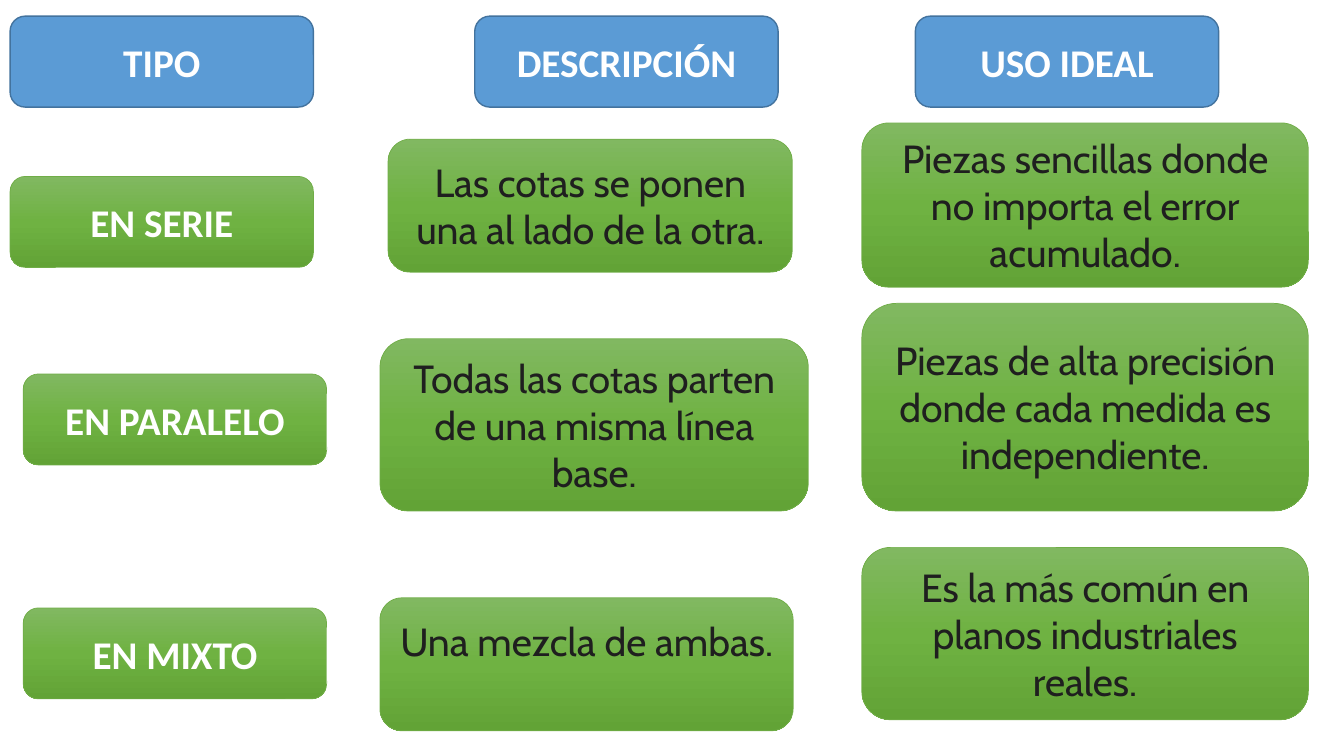
"""Build a slide comparing three ways of dimensioning a drawing."""
from copy import deepcopy

from pptx import Presentation
from pptx.dml.color import RGBColor
from pptx.enum import shapes, text
from pptx.util import Pt

GREENS = [(0, "81B861"), (0.5, "6FB242"), (1, "62A336")]
LABEL_W, LABEL_H = 216.7, 65
USE_LEFT, USE_W = 615.6, 319

HEADERS = [("TIPO", 7.2), ("DESCRIPCIÓN", 339.1), ("USO IDEAL", 653.8)]
TYPES = [("EN SERIE", 7.2, 126), ("EN PARALELO", 16.6, 267.1), ("EN MIXTO", 16.6, 434.2)]
DETAILS = [
    ("Las cotas se ponen una al lado de la otra.", 277.2, 99.4, 288.7, 95),
    ("Todas las cotas parten de una misma línea base.", 271.4, 241.9, 306, 123.1),
    ("Una mezcla de ambas.", 271.4, 427, 295.2, 95),
    ("Piezas sencillas donde no importa el error acumulado.", USE_LEFT, 87.8, USE_W, 117.4),
    ("Piezas de alta precisión donde cada medida es independiente.",
     USE_LEFT, 216.7, USE_W, 148.3),
    ("Es la más común en planos industriales reales.", USE_LEFT, 391, USE_W, 123.1),
]


def rgb(value):
    return RGBColor.from_string(value)


def add_box(s, words, left, top, width, height, header=False, label=True):
    sp = s.shapes.add_shape(shapes.MSO_SHAPE.ROUNDED_RECTANGLE,
                            Pt(left), Pt(top), Pt(width), Pt(height))
    sp.shadow.inherit = False
    if header:
        sp.fill.solid()
        sp.fill.fore_color.rgb = rgb("5B9BD5")
    else:
        sp.fill.gradient()
        sp.fill.gradient_angle = 270
        stops = sp._element.xpath(".//a:gsLst")[0]
        stops.append(deepcopy(stops[0]))
        for stop, (position, color) in zip(sp.fill.gradient_stops, GREENS):
            stop.position = position
            stop.color.rgb = rgb(color)
    sp.line.color.rgb = rgb("43739E" if header else "70AD47")
    sp.line.width = Pt(1 if header else 0.5)
    tf = sp.text_frame
    tf.word_wrap = True
    tf.vertical_anchor = text.MSO_ANCHOR.MIDDLE
    p = tf.paragraphs[0]
    p.alignment = text.PP_ALIGN.CENTER
    r = p.add_run()
    r.text = words
    r.font.size = Pt(28)
    r.font.name = "Calibri" if label else "Cabin"
    r.font.bold = label
    r.font.color.rgb = rgb("FFFFFF" if label else "1F1F1F")
    return sp


prs = Presentation()
prs.slide_width, prs.slide_height = Pt(960), Pt(540)
s = prs.slides.add_slide(prs.slide_layouts[6])

for words, left in HEADERS:
    add_box(s, words, left, 11.5, LABEL_W, LABEL_H, header=True)

for words, left, top in TYPES:
    add_box(s, words, left, top, LABEL_W, LABEL_H)

for words, *place in DETAILS:
    sp = add_box(s, words, *place, label=False)
    if words == "Una mezcla de ambas.":
        sp.text_frame.margin_bottom = Pt(37)

prs.save("out.pptx")
